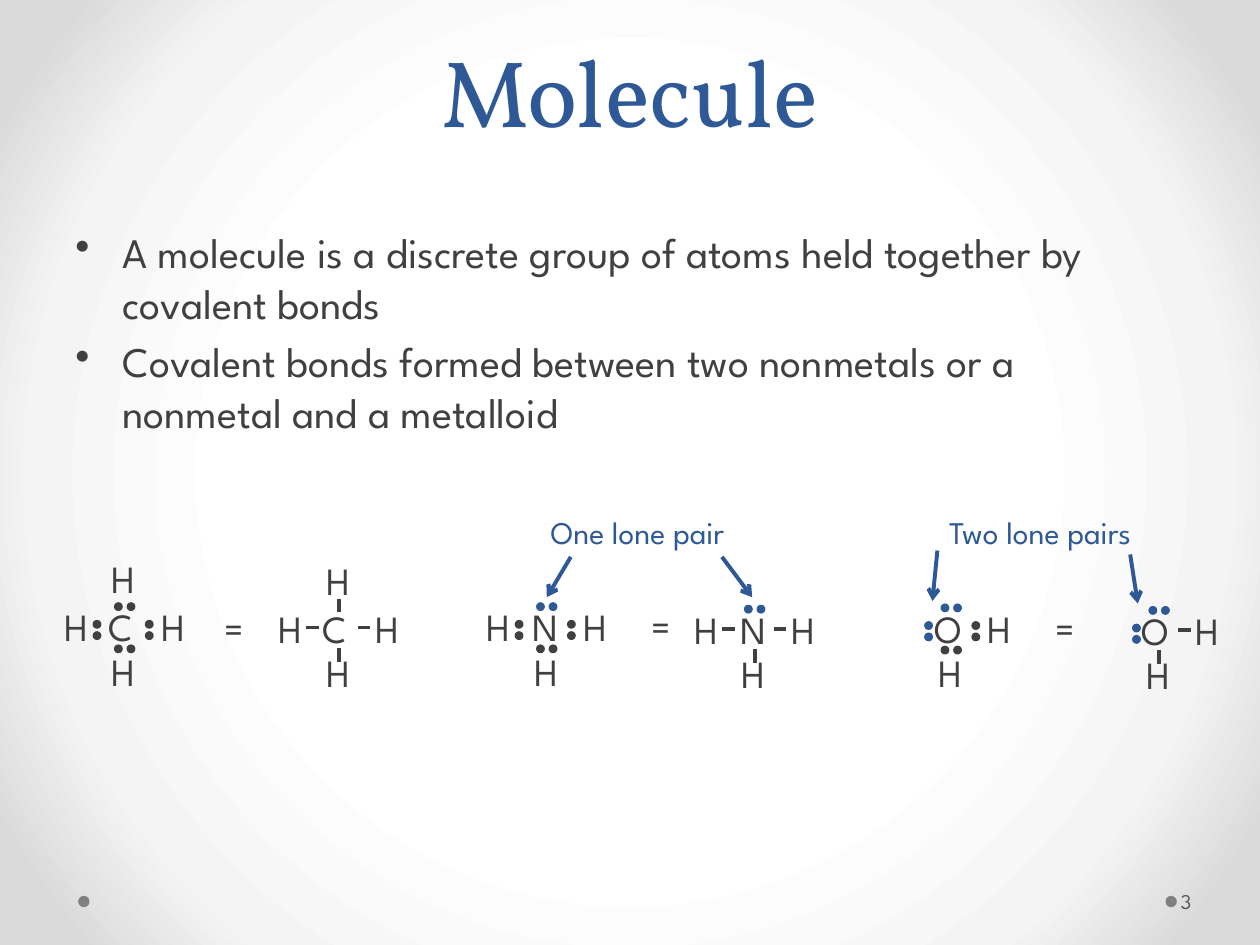
from dataclasses import dataclass

from lxml.etree import SubElement as Sub
from pptx import Presentation
from pptx.dml.color import RGBColor as Rgb
from pptx.enum.shapes import MSO_CONNECTOR as Conn, MSO_SHAPE as Shape
from pptx.enum.text import MSO_ANCHOR as Anchor, MSO_AUTO_SIZE as Fit, PP_ALIGN as Align
from pptx.oxml import parse_xml
from pptx.oxml.ns import nsdecls, qn
from pptx.util import Inches, Pt


@dataclass(frozen=True)
class Theme:
    head: str = "Vollkorn"
    body: str = "League Spartan"
    ink: str = "404040"
    blue: str = "2F5897"
    gray: str = "808080"
    page: str = "595959"
    big: int = 54
    text: int = 24
    atom: int = 22
    note: int = 18
    small: int = 12
    line: float = 2.25
    rim: float = 0.75
    glow: tuple = ((50, "FFFFFF"), (76, "F4F4F4"), (92, "DADADA"))


T = Theme()
COLS, ROWS = 100, 75  # square grid cells over a 10 x 7.5 inch slide

# Places around an atom, in cells from its middle column and top row
DOTS = {"L": ((-2.5, 1.85), (-2.5, 2.75)), "R": ((1.65, 1.85), (1.65, 2.75)),
        "T": ((-0.8, 0.45), (0.2, 0.45)), "B": ((-0.8, 3.8), (0.2, 3.8))}
BONDS = {"L": (-2.6, 2.3, -1.6, 2.3), "R": (1.5, 2.3, 2.5, 2.3),
         "T": (0, 1.1, 0, 0), "B": (0, 5, 0, 3.9)}
HYDRO = {"L": (-5.75, 0, 3.7), "R": (1.9, 0, 3.7),
         "T": (-2, -3.8, 4.1), "B": (-2, 3.5, 4.1)}
WIDE = {"C": 4.5, "N": 4.3, "O": 4.7}


def cell(n):
    return Inches(10 / COLS * n)


def style(para, size, color, face=T.body):
    para.font.size = Pt(size)
    para.font.name = face
    para.font.color.rgb = Rgb.from_string(color)


def label(shapes, text, x, y, w, h, size=T.atom, color=T.ink, wrap=True, fit=True):
    box = shapes.add_textbox(*map(cell, (x, y, w, h)))
    frame = box.text_frame
    frame.text = text
    frame.word_wrap = wrap
    frame.auto_size = Fit.SHAPE_TO_FIT_TEXT if fit else Fit.NONE
    for para in frame.paragraphs:
        style(para, size, color)
    return frame


def dot(shapes, x, y, color, size=0.6, rim=T.rim):
    oval = shapes.add_shape(Shape.OVAL, *map(cell, (x, y, size, size)))
    oval.shadow.inherit = False
    oval.fill.solid()
    oval.fill.fore_color.rgb = Rgb.from_string(color)
    if rim:
        oval.line.color.rgb = Rgb.from_string(color)
        oval.line.width = Pt(rim)
    else:
        oval.line.fill.background()


def pair(shapes, x, y, side, color, shift=0):
    for dx, dy in DOTS[side]:
        dot(shapes, x + dx + shift, y + dy, color)


def stroke(shapes, ends, color=T.ink, arrow=False):
    link = shapes.add_connector(Conn.STRAIGHT, *map(cell, ends))
    link.line.color.rgb = Rgb.from_string(color)
    link.line.width = Pt(T.line)
    if arrow:
        Sub(link.line._get_or_add_ln(), qn("a:tailEnd"), type="arrow")
    Sub(link._element.spPr, qn("a:effectLst"))


def atom(shapes, name, x, y, bound, lone="", bonds=False):
    """Draw an atom with its hydrogens, as dot pairs or as bond lines."""
    w = WIDE[name]
    label(shapes, name, x - w / 2, y, w, 4.7, wrap=False)
    for side in bound:
        dx, dy, w = HYDRO[side]
        label(shapes, "H", x + dx, y + dy, w, 4.7, wrap=side in "LR")
        if bonds:
            x1, y1, x2, y2 = BONDS[side]
            stroke(shapes, (x + x1, y + y1, x + x2, y + y2))
        else:
            pair(shapes, x, y, side, T.ink)
    for side in lone:
        pair(shapes, x, y, side, T.blue, 0.4 if side == "L" else 0)


def backdrop(slide):
    slide.background.fill.gradient()
    old = slide.element.find(".//" + qn("a:gradFill"))
    stops = "".join(f'<a:gs pos="{at * 1000}"><a:srgbClr val="{color}"/></a:gs>'
                    for at, color in T.glow)
    new = parse_xml(
        f'<a:gradFill {nsdecls("a")} rotWithShape="1"><a:gsLst>{stops}</a:gsLst>'
        '<a:path path="circle"><a:fillToRect l="50000" t="50000" r="50000" b="50000"/>'
        '</a:path></a:gradFill>')
    old.getparent().replace(old, new)


def heading(slide, text):
    title = slide.shapes.title
    title.left, title.top, title.width, title.height = map(cell, (5, 0, 90, 12.1))
    frame = title.text_frame
    frame.text = text
    frame.auto_size = Fit.NONE
    frame.vertical_anchor = Anchor.BOTTOM
    para = frame.paragraphs[0]
    para.alignment = Align.CENTER
    para.line_spacing = Pt(58)
    style(para, T.big, T.blue, T.head)


def bullets(shapes, lines):
    frame = label(shapes, "\n".join(lines), 5, 17.5, 90, 49.5, T.text, fit=False)
    for para in frame.paragraphs:
        para.space_before = Pt(T.text * 0.2)
        props = para._p.get_or_add_pPr()
        props.set("marL", str(cell(3.75)))
        props.set("indent", str(-cell(3.75)))
        # The bullet goes before the default run properties
        mark = parse_xml(f'<a:buChar {nsdecls("a")} char="•"/>')
        props.find(qn("a:defRPr")).addprevious(mark)


def main():
    deck = Presentation()
    deck.slide_width, deck.slide_height = cell(COLS), cell(ROWS)
    slide = deck.slides.add_slide(deck.slide_layouts[5])
    shapes = slide.shapes
    backdrop(slide)

    # Footer dots, title and text
    for x in (92.5, 6.2):
        dot(shapes, x, 71.1, T.gray, 0.9, None)
    heading(slide, "Molecule")
    bullets(shapes, (
        "A molecule is a discrete group of atoms held together by covalent bonds",
        "Covalent bonds formed between two nonmetals or a nonmetal and a metalloid"))

    # Each molecule: dot form = bond form
    forms = (("C", "LRBT", "", (9.9, 47.4), (16.8, 47.5), (26.9, 47.5)),
             ("N", "LRB", "T", (43.4, 47.4), (50.7, 47.4), (59.9, 47.6)),
             ("O", "RB", "TL", (75.5, 47.5), (82.8, 47.5), (92, 47.7)))
    for name, bound, lone, left, mid, right in forms:
        group = shapes.add_group_shape().shapes
        atom(group, name, *left, bound, lone)
        label(group, "=", *mid, 3.9, 4.7)
        atom(group, name, *right, bound, lone, bonds=True)

    # Notes on lone pairs, with arrows
    for text, x, w, wrap in (("One lone pair", 40.5, 20.2, True),
                             ("Two lone pairs", 72.9, 19.3, False)):
        frame = label(shapes, text, x, 40.2, w, 4, T.note, T.blue, wrap)
        frame.paragraphs[0].alignment = Align.CENTER
    for ends in ((45.3, 44.2, 43.4, 47.4), (57.3, 44.2, 59.7, 47.4),
                 (74.4, 43.7, 74, 47.7), (89.7, 44, 90.3, 47.9)):
        stroke(shapes, ends, T.blue, arrow=True)

    # Page number
    frame = label(shapes, "3", 93.4, 69.5, 6.1, 4, T.small, T.page, fit=False)
    frame.vertical_anchor = Anchor.MIDDLE
    frame.margin_left, frame.margin_right = cell(0.3), cell(0.5)

    deck.save("out.pptx")


if __name__ == "__main__":
    main()
